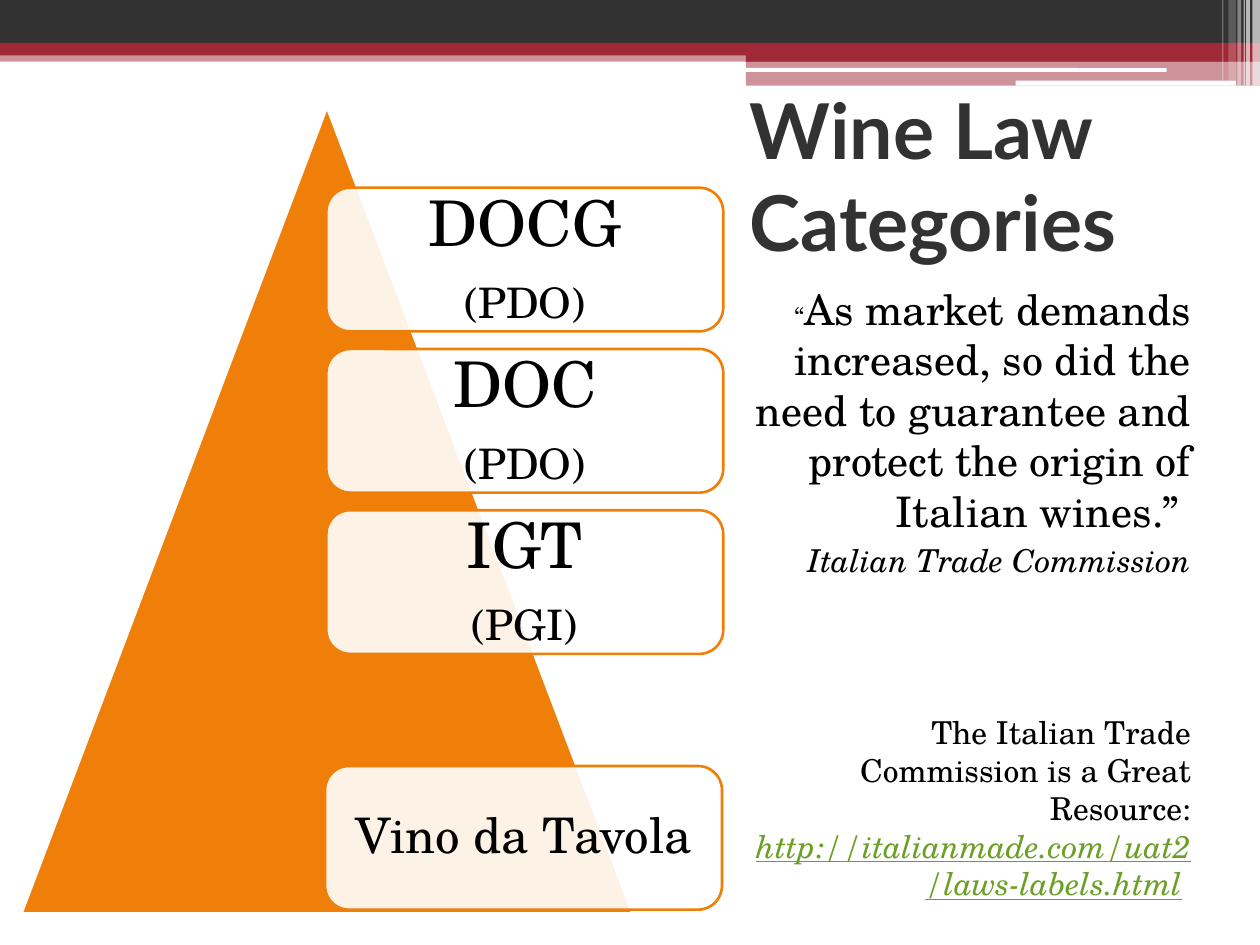
from lxml import etree
from pptx import Presentation
from pptx import util as u
from pptx.dml.color import RGBColor
from pptx.enum import shapes, text
from pptx.oxml.ns import qn

CHARCOAL = RGBColor(0x32, 0x32, 0x32)
WINE = RGBColor(0x9F, 0x29, 0x36)
ORANGE = RGBColor(0xF0, 0x7F, 0x09)
GREEN = RGBColor(0x6B, 0x9F, 0x25)
WHITE = RGBColor(0xFF, 0xFF, 0xFF)
BLACK = RGBColor(0, 0, 0)

COLUMNS, ROWS = 100, 75
SHAPE = shapes.MSO_SHAPE
ALIGN = text.PP_ALIGN
ANCHOR = text.MSO_ANCHOR


class SlideBuilder:
    """Holds the style and the current slide; boxes are in grid columns and rows."""

    heading_font = "Lato"
    body_font = "TeX Gyre Schola"

    def __init__(self, presentation):
        self.column = presentation.slide_width / COLUMNS
        self.row = presentation.slide_height / ROWS
        self.slide = presentation.slides.add_slide(presentation.slide_layouts[5])

    def box(self, left, top, width, height):
        return [round(length) for length in (left * self.column, top * self.row,
                                             width * self.column, height * self.row)]

    def block(self, kind, place, color, opacity=100, line=None):
        shape = self.slide.shapes.add_shape(kind, *self.box(*place))
        shape.shadow.inherit = False
        shape.fill.solid()
        shape.fill.fore_color.rgb = color
        if opacity < 100:
            color_node = shape.element.spPr.find(qn("a:solidFill"))[0]
            etree.SubElement(color_node, qn("a:alpha"), val=str(opacity * 1000))
        if line is None:
            shape.line.fill.background()
        else:
            shape.line.color.rgb = line
            shape.line.width = u.Pt(1.5)
        return shape

    def frame(self, shape, anchor, inset=None):
        frame = shape.text_frame
        settings = {"word_wrap": True, "vertical_anchor": anchor}
        if inset is not None:
            for side in ("left", "right", "top", "bottom"):
                settings["margin_" + side] = u.Inches(inset)
        for name, value in settings.items():
            setattr(frame, name, value)
        return frame

    def add_paragraphs(self, frame, paragraphs):
        """Each paragraph is (paragraph format, [(text, size, font format), ...])."""
        for index, (layout, runs) in enumerate(paragraphs):
            paragraph = frame.add_paragraph() if index else frame.paragraphs[0]
            for name, value in layout.items():
                setattr(paragraph, name, value)
            for words, size, look in runs:
                run = paragraph.add_run()
                run.text = words
                style = {"name": self.body_font, "size": u.Pt(size), "color": BLACK} | look
                run.font.color.rgb = style.pop("color")
                for name, value in style.items():
                    setattr(run.font, name, value)

    def title(self, words, place):
        title = self.slide.shapes.title
        title.left, title.top, title.width, title.height = self.box(*place)
        frame = self.frame(title, ANCHOR.BOTTOM)
        frame.auto_size = text.MSO_AUTO_SIZE.NONE
        look = {"name": self.heading_font, "color": CHARCOAL, "bold": True}
        self.add_paragraphs(frame, [({"alignment": ALIGN.LEFT}, [(words, 44, look)])])

    def text_box(self, place, paragraphs):
        shape = self.slide.shapes.add_textbox(*self.box(*place))
        self.add_paragraphs(self.frame(shape, ANCHOR.TOP), paragraphs)

    def card(self, place, lines, inset):
        shape = self.block(SHAPE.ROUNDED_RECTANGLE, place, WHITE, 90, ORANGE)
        self.add_paragraphs(self.frame(shape, ANCHOR.MIDDLE, inset), [
            ({"alignment": ALIGN.CENTER, "line_spacing": 0.9,
              "space_after": u.Pt(size * 0.35)}, [(words, size, {})])
            for words, size in lines])


def draw_banner(builder):
    bands = [
        ((0, 4, 100, 0.9), WINE, 50),
        ((0, 0, 100, 3.4), CHARCOAL, 100),
        ((0, 3.4, 100, 1), WINE, 100),
        ((59.2, 3.9, 40.8, 1), WINE, 100),
        ((59.2, 4.8, 40.8, 2), WINE, 50),
    ]
    for place, color, opacity in bands:
        builder.block(SHAPE.RECTANGLE, place, color, opacity)
    for place in ((59.1, 5.4, 33.5, 0.3), (80.6, 6.4, 17.5, 0.4)):
        builder.block(SHAPE.ROUNDED_RECTANGLE, place, WHITE)
    stripes = [(99.4, 0.6, 6.8, 65), (98.9, 0.3, 6.8, 65), (98.7, 0.1, 6.8, 60),
               (98.2, 0.3, 6.8, 40), (97.5, 0.6, 6.4, 20), (97, 0.1, 6.4, 30)]
    for left, width, height, opacity in stripes:
        builder.block(SHAPE.RECTANGLE, (left, 0, width, height), WHITE, opacity)


def draw_pyramid(builder):
    builder.block(SHAPE.ISOSCELES_TRIANGLE, (1.7, 8.5, 48.5, 64), ORANGE, line=WHITE)
    levels = [("DOCG", "(PDO)"), ("DOC", "(PDO)"), ("IGT", "(PGI)")]
    for index, (name, european_class) in enumerate(levels):
        builder.card((25.9, 14.9 + 12.8 * index, 31.5, 11.4),
                     [(name, 36), (european_class, 24)], 0.15)
    builder.card((25.8, 60.8, 31.5, 11.4), [("Vino da Tavola", 28)], 0.12)


def draw_quote(builder):
    right = {"alignment": ALIGN.RIGHT, "space_before": u.Pt(3)}
    builder.text_box((58.5, 22, 37, 50.5), [
        (right, [("“", 14, {}),
                 ("As market demands increased, so did the need to guarantee and "
                  "protect the origin of Italian wines.” ", 24, {})]),
        (right, [("Italian Trade Commission", 18, {"italic": True})]),
        (right | {"space_before": u.Pt(77)}, [
            ("The Italian Trade Commission is a Great Resource: ", 18, {}),
            ("http://italianmade.com/uat2/laws-labels.html", 18,
             {"color": GREEN, "italic": True, "underline": True}),
            (" ", 18, {"italic": True})]),
    ])


def main():
    presentation = Presentation()
    presentation.slide_width = u.Inches(10)
    presentation.slide_height = u.Inches(7.5)
    builder = SlideBuilder(presentation)
    draw_banner(builder)
    builder.title("Wine Law Categories", (58.5, 12.1, 37, 9.6))
    draw_quote(builder)
    draw_pyramid(builder)
    presentation.save("out.pptx")


if __name__ == "__main__":
    main()
